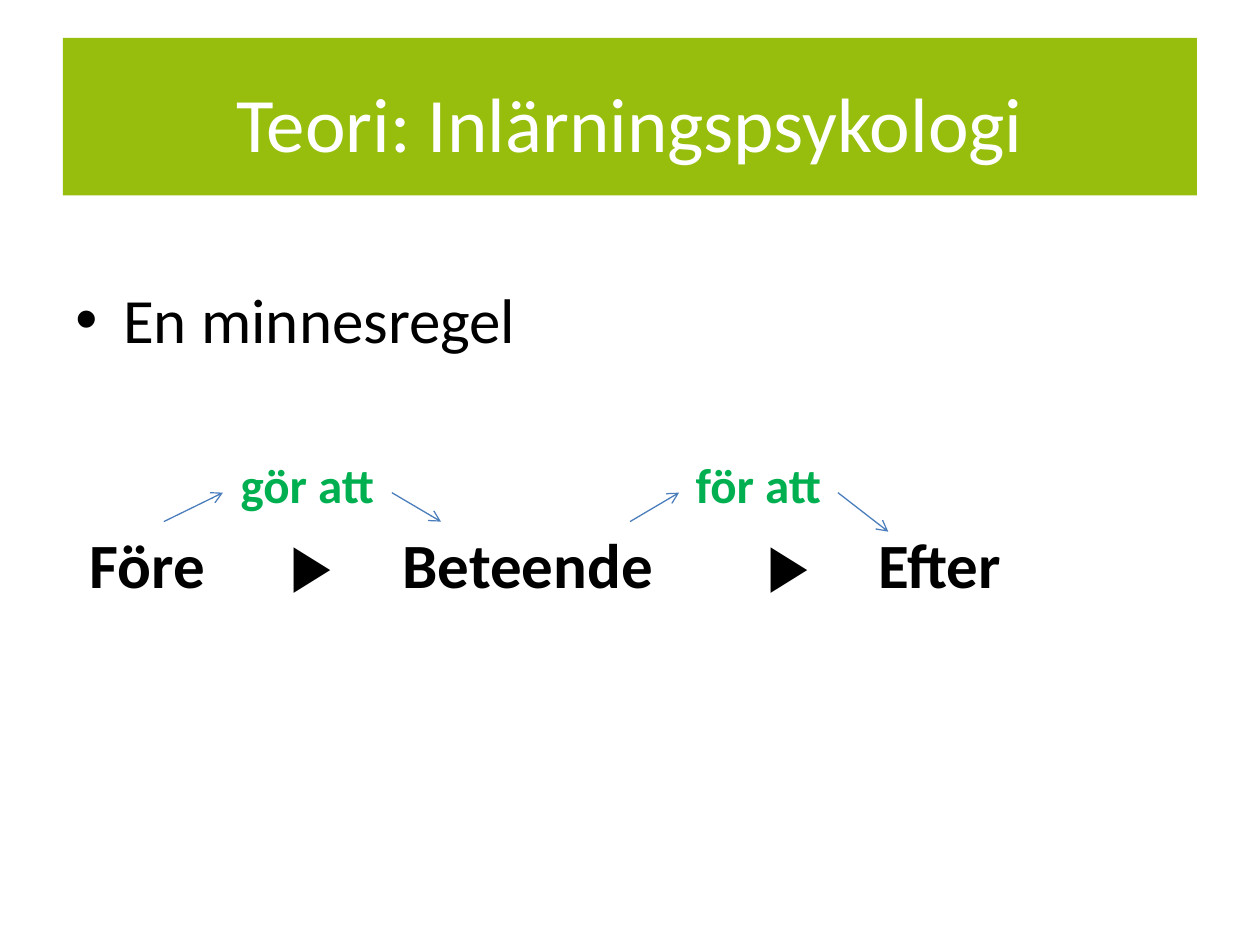
import pptx
import pptx.util
import pptx.dml.color
import pptx.enum.shapes
import pptx.enum.text
import pptx.oxml.ns
from lxml import etree

COLOURS = {"banner": "97BE0D", "title": "FFFFFF", "text": "000000",
           "link": "00B050", "arrow": "4B7EBC"}
FONT = "Calibri"
MARGIN = 0.5
CONTENT_WIDTH = 9
INSET = 0.1
LINK_CENTRES = [2.44, 6.02]
STEP_CENTRES = [1.17, 2.47, 4.19, 6.26, 7.46]
ARROW_TOP, ARROW_BOTTOM = 3.91, 4.14
ARROWS = [
    ((1.3, ARROW_BOTTOM), (1.77, ARROW_TOP)),
    ((3.11, ARROW_TOP), (3.5, ARROW_BOTTOM)),
    ((5, ARROW_BOTTOM), (5.39, ARROW_TOP)),
    ((6.65, ARROW_TOP), (7.05, 4.22)),
]


def inches(*lengths):
    return [pptx.util.Inches(length) for length in lengths]


def rgb(name):
    return pptx.dml.color.RGBColor.from_string(COLOURS[name])


def add_xml(parent, tag, **attributes):
    return etree.SubElement(parent, pptx.oxml.ns.qn(tag), attributes)


def write(paragraph, text, size, colour, bold=False, before=0):
    paragraph.text = text
    paragraph.space_before = pptx.util.Pt(before)
    font = paragraph.font
    font.name, font.size, font.bold = FONT, pptx.util.Pt(size), bold
    font.color.rgb = rgb(colour)


def add_banner(slide, title):
    banner = slide.shapes.add_shape(
        pptx.enum.shapes.MSO_SHAPE.RECTANGLE,
        *inches(MARGIN, 0.3, CONTENT_WIDTH, 1.25))
    banner.shadow.inherit = False
    banner.fill.solid()
    banner.fill.fore_color.rgb = rgb("banner")
    banner.line.fill.background()
    frame = banner.text_frame
    frame.vertical_anchor = pptx.enum.text.MSO_ANCHOR.MIDDLE
    frame.margin_top = pptx.util.Inches(0.13)
    write(frame.paragraphs[0], title, 44, "title")
    frame.paragraphs[0].alignment = pptx.enum.text.PP_ALIGN.CENTER


def set_bullet(paragraph):
    properties = paragraph._p.get_or_add_pPr()
    indent = pptx.util.Inches(0.38)
    properties.set("marL", str(indent))
    properties.set("indent", str(-indent))
    add_xml(properties, "a:buFont", typeface="Arial")
    add_xml(properties, "a:buChar", char="•")


def write_centred_words(paragraph, words, centres, **style):
    """Centre each word on its slide position with a tab stop."""
    write(paragraph, "".join("\t" + word for word in words), **style)
    # Tab stops precede the default run properties in the schema.
    properties = paragraph._p.get_or_add_pPr()
    stops = add_xml(properties, "a:tabLst")
    defaults = properties.find(pptx.oxml.ns.qn("a:defRPr"))
    if defaults is not None:
        defaults.addprevious(stops)
    for centre in centres:
        position = pptx.util.Inches(centre - MARGIN - INSET)
        add_xml(stops, "a:tab", pos=str(position), algn="ctr")


def add_body(slide):
    body = slide.shapes.add_textbox(*inches(MARGIN, 2.18, CONTENT_WIDTH, 4.52))
    frame = body.text_frame
    frame.word_wrap = True
    heading = frame.paragraphs[0]
    set_bullet(heading)
    write(heading, "En minnesregel", 36, "text")
    write_centred_words(frame.add_paragraph(), ["gör att", "för att"],
                        LINK_CENTRES, size=28, colour="link", bold=True,
                        before=56)
    write_centred_words(frame.add_paragraph(),
                        ["Före", "▶", "Beteende", "▶", "Efter"],
                        STEP_CENTRES, size=36, colour="text", bold=True,
                        before=7.2)


def add_arrow(slide, start, end):
    arrow = slide.shapes.add_connector(
        pptx.enum.shapes.MSO_CONNECTOR.STRAIGHT, *inches(*start, *end))
    arrow.line.color.rgb = rgb("arrow")
    arrow.line.width = pptx.util.Pt(0.75)
    add_xml(arrow.line._get_or_add_ln(), "a:tailEnd", type="arrow")
    add_xml(arrow._element.spPr, "a:effectLst")


def main():
    presentation = pptx.Presentation()
    presentation.slide_width, presentation.slide_height = inches(10, 7.5)
    slide = presentation.slides.add_slide(presentation.slide_layouts[6])
    add_body(slide)
    add_banner(slide, "Teori: Inlärningspsykologi")
    for start, end in ARROWS:
        add_arrow(slide, start, end)
    presentation.save("out.pptx")


if __name__ == "__main__":
    main()
